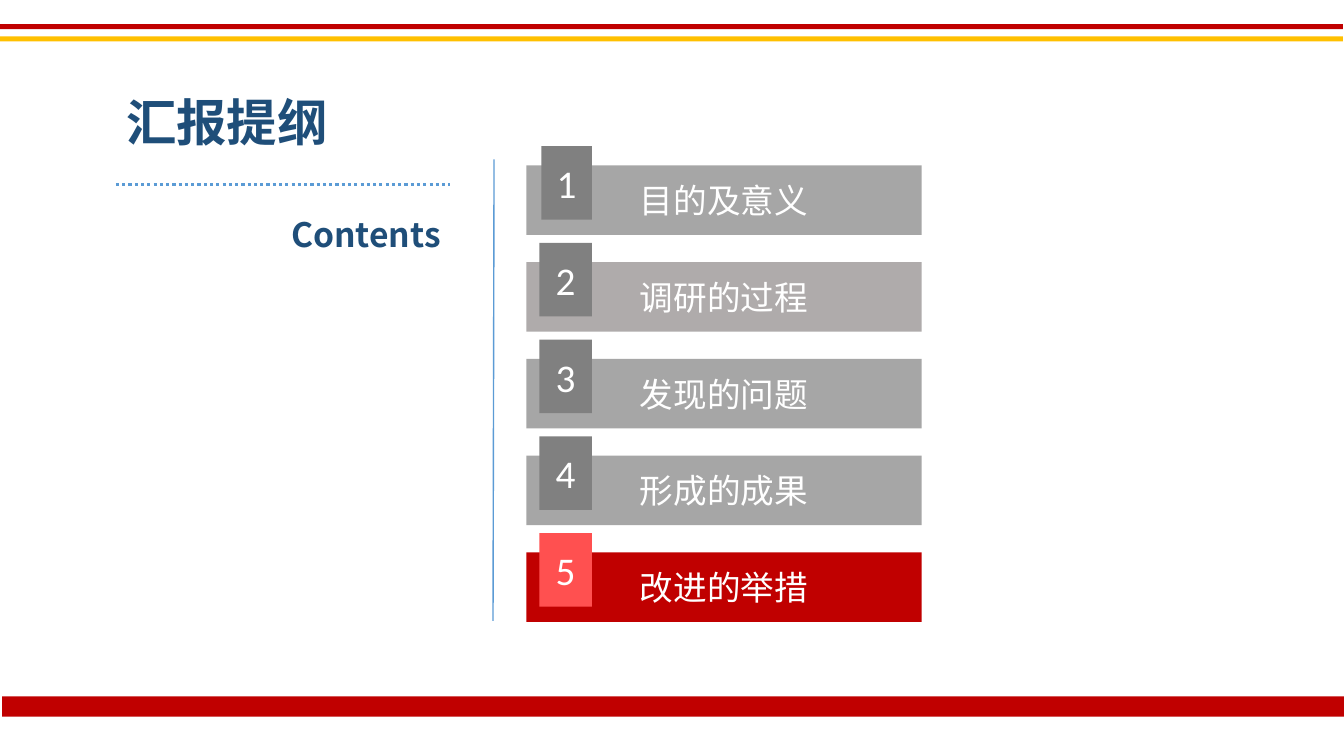
from dataclasses import dataclass

from lxml import etree
from pptx import Presentation
from pptx import util as u
from pptx.dml.color import RGBColor
from pptx.enum import dml, shapes, text
from pptx.oxml import ns
from pptx.shapes.autoshape import Shape
from pptx.shapes.connector import Connector
from pptx.slide import Slide
from pptx.text.text import TextFrame

PX = 9144  # EMU per px, 100 px to the inch

WHITE = RGBColor(0xFF, 0xFF, 0xFF)
NAVY = RGBColor(0x1F, 0x4E, 0x79)
BLUE = RGBColor(0x5B, 0x9B, 0xD5)
RED = RGBColor(0xC0, 0x00, 0x00)
LIGHT_RED = RGBColor(0xFF, 0x50, 0x50)
GOLD = RGBColor(0xFF, 0xC0, 0x00)
GREY = RGBColor(0xA6, 0xA6, 0xA6)
WARM_GREY = RGBColor(0xAF, 0xAB, 0xAB)
DARK_GREY = RGBColor(0x80, 0x80, 0x80)

HEADING_FONT = "Noto Sans CJK SC"
NUMBER_FONT = "Calibri"

FIRST_TOPIC_TOP = 164
TOPIC_PITCH = 96
TAB_RISE = 19
TAB_RIGHT = 587


@dataclass(frozen=True)
class Box:
    left: int
    top: int
    width: int
    height: int

    def emu(self) -> tuple[int, int, int, int]:
        return self.left * PX, self.top * PX, self.width * PX, self.height * PX


@dataclass(frozen=True)
class TextStyle:
    size: int
    color: RGBColor
    font: str = HEADING_FONT
    bold: bool = False
    align: text.PP_ALIGN = text.PP_ALIGN.CENTER


@dataclass(frozen=True)
class Topic:
    label: str
    bar_color: RGBColor = GREY
    tab_color: RGBColor = DARK_GREY
    tab_width: int = 52


@dataclass(frozen=True)
class Stripe:
    box: Box
    color: RGBColor


TOPICS = (
    Topic("目的及意义", tab_width=50),
    Topic("调研的过程", bar_color=WARM_GREY),
    Topic("发现的问题"),
    Topic("形成的成果"),
    Topic("改进的举措", bar_color=RED, tab_color=LIGHT_RED),
)
STRIPES = (
    Stripe(Box(0, 24, 1332, 5), RED),
    Stripe(Box(0, 36, 1332, 5), GOLD),
    Stripe(Box(2, 691, 1332, 20), RED),
)

TITLE_STYLE = TextStyle(36, NAVY, bold=True, align=text.PP_ALIGN.LEFT)
SUBTITLE_STYLE = TextStyle(24, NAVY, bold=True, align=text.PP_ALIGN.RIGHT)
LABEL_STYLE = TextStyle(24, WHITE)
NUMBER_STYLE = TextStyle(28, WHITE, font=NUMBER_FONT)


def write(frame: TextFrame, words: str, style: TextStyle) -> None:
    frame.word_wrap = True
    frame.text = words
    paragraph = frame.paragraphs[0]
    paragraph.alignment = style.align
    font = paragraph.font
    font.size = u.Pt(style.size)
    font.bold = style.bold
    font.color.rgb = style.color
    font.name = style.font
    defaults = paragraph._p.get_or_add_pPr().get_or_add_defRPr()
    etree.SubElement(defaults, ns.qn("a:ea"), typeface=style.font)


def write_heading(shape: Shape, box: Box, words: str, style: TextStyle) -> None:
    shape.left, shape.top, shape.width, shape.height = box.emu()
    write(shape.text_frame, words, style)
    shape.text_frame.vertical_anchor = text.MSO_ANCHOR.TOP
    shape.text_frame.auto_size = text.MSO_AUTO_SIZE.SHAPE_TO_FIT_TEXT


def add_block(slide: Slide, box: Box, color: RGBColor) -> Shape:
    block = slide.shapes.add_shape(shapes.MSO_SHAPE.RECTANGLE, *box.emu())
    block.shadow.inherit = False
    block.fill.solid()
    block.fill.fore_color.rgb = color
    block.line.fill.background()
    return block


def add_rule(slide: Slide, start: tuple[int, int], end: tuple[int, int], weight: float) -> Connector:
    rule = slide.shapes.add_connector(
        shapes.MSO_CONNECTOR.STRAIGHT, *(value * PX for value in start + end)
    )
    rule.line.color.rgb = BLUE
    rule.line.width = u.Pt(weight)
    etree.SubElement(rule._element.spPr, ns.qn("a:effectLst"))
    return rule


def add_topic(slide: Slide, index: int, topic: Topic) -> None:
    top = FIRST_TOPIC_TOP + index * TOPIC_PITCH
    bar = add_block(slide, Box(522, top, 392, 69), topic.bar_color)
    tab_box = Box(TAB_RIGHT - topic.tab_width, top - TAB_RISE, topic.tab_width, 73)
    tab = add_block(slide, tab_box, topic.tab_color)
    for block, words, style in (
        (bar, topic.label, LABEL_STYLE),
        (tab, str(index + 1), NUMBER_STYLE),
    ):
        write(block.text_frame, words, style)
        block.text_frame.vertical_anchor = text.MSO_ANCHOR.MIDDLE


def main() -> None:
    deck = Presentation()
    deck.slide_width, deck.slide_height = 1333 * PX, 750 * PX
    slide = deck.slides.add_slide(deck.slide_layouts.get_by_name("Title Only"))

    write_heading(slide.shapes.title, Box(115, 85, 282, 71), "汇报提纲", TITLE_STYLE)
    subtitle_box = Box(165, 207, 282, 51)
    subtitle = slide.shapes.add_textbox(*subtitle_box.emu())
    write_heading(subtitle, subtitle_box, "Contents", SUBTITLE_STYLE)

    underline = add_rule(slide, (115, 183), (446, 183), 2.25)
    underline.line.dash_style = dml.MSO_LINE.ROUND_DOT
    add_rule(slide, (490, 158), (489, 616), 1)

    for index, topic in enumerate(TOPICS):
        add_topic(slide, index, topic)
    for stripe in STRIPES:
        add_block(slide, stripe.box, stripe.color)

    deck.save("out.pptx")


if __name__ == "__main__":
    main()
